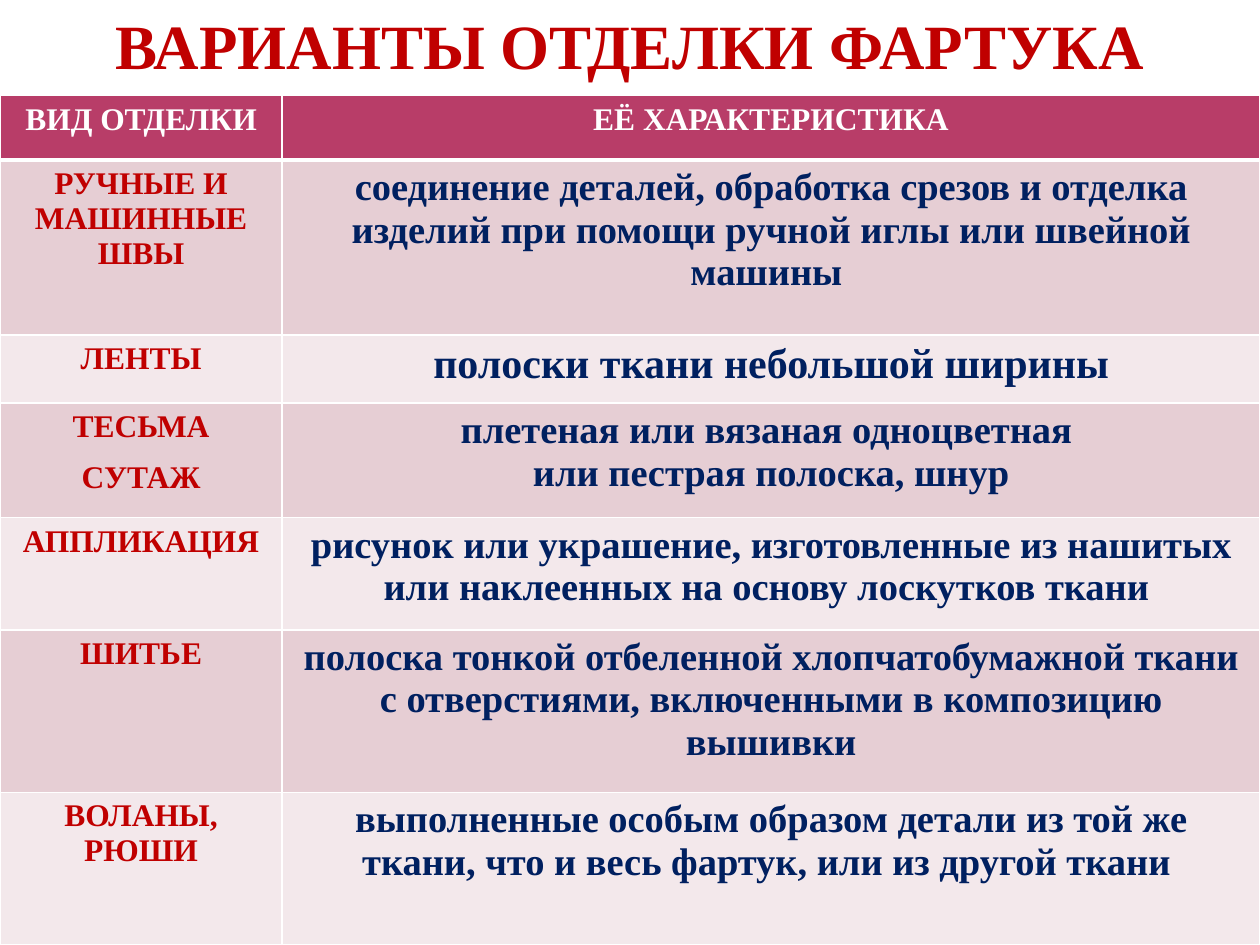
import dataclasses
import typing

import lxml.etree
import pptx
import pptx.dml.color
import pptx.enum.text
import pptx.oxml.ns
import pptx.util


@dataclasses.dataclass(frozen=True)
class Theme:
    font: str = "Times New Roman"
    red: str = "C00000"
    navy: str = "002060"
    white: str = "FFFFFF"
    head: str = "B83D68"
    bands: tuple[str, str] = ("E6CED4", "F3E8EB")
    title: float = 36
    label: float = 18
    body: float = 22
    large: float = 24
    gap: float = 9
    line: float = 1
    rule: float = 3


THEME = Theme()


class Trim(typing.NamedTuple):
    label: str
    text: str
    height: float
    size: float = THEME.body


TRIMS = [
    Trim("РУЧНЫЕ И МАШИННЫЕ ШВЫ",
         "соединение деталей, обработка срезов и отделка изделий "
         "при помощи ручной иглы или швейной машины ", 1.39),
    Trim("ЛЕНТЫ", "полоски ткани небольшой ширины", 0.54, THEME.large),
    Trim("ТЕСЬМА\nСУТАЖ",
         "плетеная или вязаная одноцветная \nили пестрая полоска, шнур", 0.91),
    Trim("АППЛИКАЦИЯ",
         "рисунок или украшение, изготовленные из нашитых "
         "или наклеенных на основу лоскутков ткани ", 0.89),
    Trim("ШИТЬЕ",
         "полоска тонкой отбеленной хлопчатобумажной ткани "
         "с отверстиями, включенными в композицию вышивки", 1.29),
    Trim("ВОЛАНЫ, РЮШИ",
         "выполненные особым образом детали из той же ткани, "
         "что и весь фартук, или из другой ткани ", 1.21),
]
HEAD = ("ВИД ОТДЕЛКИ", "ЕЁ ХАРАКТЕРИСТИКА")
HEAD_HEIGHT = 0.51
WIDTHS = (2.24, 7.76)
TABLE_TOP = 0.76


def paint(text: str) -> pptx.dml.color.RGBColor:
    return pptx.dml.color.RGBColor.from_string(text)


def write(frame, text: str, size: float, ink: str, gap: float = 0) -> None:
    form = {"name": THEME.font, "size": pptx.util.Pt(size), "bold": True}
    frame.word_wrap = True
    for i, line in enumerate(text.split("\n")):
        para = frame.add_paragraph() if i else frame.paragraphs[0]
        para.alignment = pptx.enum.text.PP_ALIGN.CENTER
        para.space_before = pptx.util.Pt(gap if i else 0)
        run = para.add_run()
        run.text = line
        for key, value in form.items():
            setattr(run.font, key, value)
        run.font.color.rgb = paint(ink)


def edge(cell, tag: str, width: float) -> None:
    props = cell._tc.get_or_add_tcPr()
    line = lxml.etree.SubElement(props, pptx.oxml.ns.qn(tag),
                                 w=str(pptx.util.Pt(width)))
    fill = lxml.etree.SubElement(line, pptx.oxml.ns.qn("a:solidFill"))
    lxml.etree.SubElement(fill, pptx.oxml.ns.qn("a:srgbClr"), val=THEME.white)


def draw_cell(cell, text: str, size: float, ink: str, fill: str,
              top: float, base: float, gap: float = 0) -> None:
    write(cell.text_frame, text, size, ink, gap)
    sides = {"a:lnL": THEME.line, "a:lnR": THEME.line,
             "a:lnT": top, "a:lnB": base}
    for tag, width in sides.items():
        edge(cell, tag, width)
    cell.fill.solid()
    cell.fill.fore_color.rgb = paint(fill)


def draw_title(slide) -> None:
    box = slide.shapes.add_textbox(0, 0, pptx.util.Inches(10),
                                   pptx.util.Inches(0.71))
    write(box.text_frame, "ВАРИАНТЫ ОТДЕЛКИ ФАРТУКА", THEME.title, THEME.red)


def draw_table(slide) -> None:
    highs = [HEAD_HEIGHT] + [trim.height for trim in TRIMS]
    table = slide.shapes.add_table(
        len(highs), len(WIDTHS), 0, pptx.util.Inches(TABLE_TOP),
        pptx.util.Inches(sum(WIDTHS)), pptx.util.Inches(sum(highs))).table
    table.horz_banding = False
    for col, width in zip(table.columns, WIDTHS):
        col.width = pptx.util.Inches(width)
    for row, high in zip(table.rows, highs):
        row.height = pptx.util.Inches(high)
    for i, text in enumerate(HEAD):
        draw_cell(table.cell(0, i), text, THEME.label, THEME.white,
                  THEME.head, THEME.line, THEME.rule)
    for i, trim in enumerate(TRIMS):
        fill = THEME.bands[i % 2]
        top = THEME.line if i else THEME.rule
        draw_cell(table.cell(i + 1, 0), trim.label, THEME.label, THEME.red,
                  fill, top, THEME.line, THEME.gap)
        draw_cell(table.cell(i + 1, 1), trim.text, trim.size, THEME.navy,
                  fill, top, THEME.line)


def main() -> None:
    deck = pptx.Presentation()
    deck.slide_width = pptx.util.Inches(10)
    deck.slide_height = pptx.util.Inches(7.5)
    slide = deck.slides.add_slide(deck.slide_layouts[6])
    draw_title(slide)
    draw_table(slide)
    deck.save("out.pptx")


if __name__ == "__main__":
    main()
